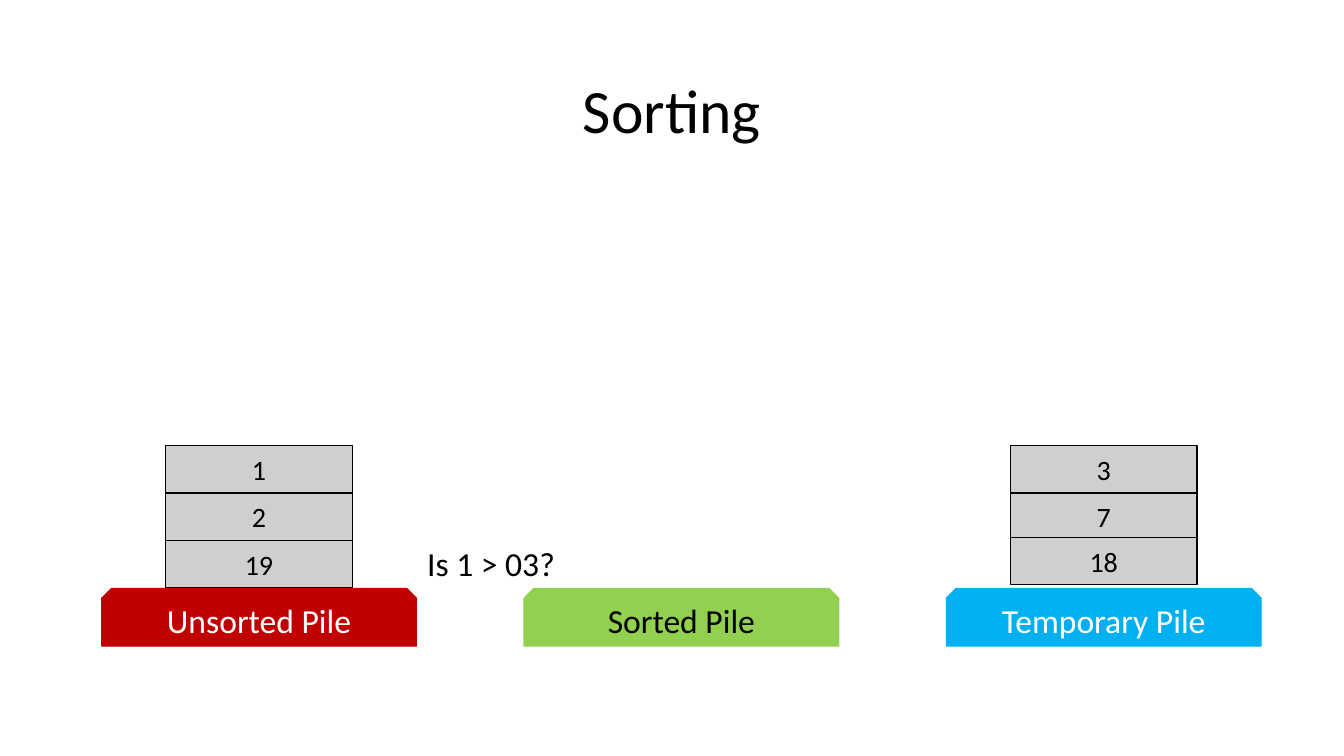
from pptx import Presentation
from pptx.dml.color import RGBColor
from pptx.enum.shapes import MSO_SHAPE
from pptx.enum.text import MSO_ANCHOR, MSO_AUTO_SIZE, PP_ALIGN
from pptx.util import Pt

HEX = {
    "red": "C00000", "green": "92D050", "blue": "00B0F0",
    "gray": "D0CECE", "black": "000000", "white": "FFFFFF",
}
BASE_TOP, BASE_W, BASE_H = 420.5, 224.64, 41
BASE_LEFT, BASE_STEP = 72.7, 301.7
CARD_TOP, CARD_W, CARD_H = 318.2, 133.2, 33.9
PILES = [
    ("Unsorted Pile", "red", "white", ["1", "2", "19"], 386),
    ("Sorted Pile", "green", "black", [], 386),
    ("Temporary Pile", "blue", "white", ["3", "7", "18"], 383.8),
]


def color(name):
    """Return the named colour."""
    return RGBColor.from_string(HEX[name])


def write(shape, text, size, ink="black", align=PP_ALIGN.CENTER):
    """Put one line of styled text in a shape."""
    frame = shape.text_frame
    frame.text = text
    frame.vertical_anchor = MSO_ANCHOR.MIDDLE
    line = frame.paragraphs[0]
    line.alignment = align
    font = line.runs[0].font
    font.name, font.size = "Calibri", Pt(size)
    font.color.rgb = color(ink)
    return frame


def add_block(slide, kind, box, fill, edge, text, size, ink):
    """Draw a filled and labelled shape."""
    shape = slide.shapes.add_shape(kind, *map(Pt, box))
    shape.shadow.inherit = False
    shape.fill.solid()
    shape.fill.fore_color.rgb = color(fill)
    shape.line.color.rgb = color(edge)
    shape.line.width = Pt(1)
    write(shape, text, size, ink)


def add_pile(slide, left, label, fill, ink, cards, last):
    """Draw a pile base with its cards, the lowest no deeper than last."""
    add_block(slide, MSO_SHAPE.SNIP_2_SAME_RECTANGLE,
              (left, BASE_TOP, BASE_W, BASE_H), fill, fill, label, 24, ink)
    inset = (BASE_W - CARD_W) / 2
    for row, card in enumerate(cards):
        top = min(CARD_TOP + row * CARD_H, last)
        add_block(slide, MSO_SHAPE.RECTANGLE,
                  (left + inset, top, CARD_W, CARD_H),
                  "gray", "black", card, 20, "black")


def add_title(slide, text):
    """Add the centred heading."""
    box = slide.shapes.add_textbox(Pt(66), Pt(28.8), Pt(828), Pt(104.4))
    frame = write(box, text, 44)
    frame.word_wrap = True
    frame.paragraphs[0].line_spacing = 0.9


def add_note(slide, text):
    """Add the question beside the first pile."""
    box = slide.shapes.add_textbox(Pt(298), Pt(384.5), Pt(106.6), Pt(36))
    frame = write(box, text, 24, align=PP_ALIGN.LEFT)
    frame.vertical_anchor = MSO_ANCHOR.TOP
    frame.word_wrap = False
    frame.auto_size = MSO_AUTO_SIZE.SHAPE_TO_FIT_TEXT


def main():
    """Build the sorting slide."""
    deck = Presentation()
    deck.slide_width, deck.slide_height = Pt(960), Pt(540)
    slide = deck.slides.add_slide(deck.slide_layouts[6])
    add_title(slide, "Sorting")
    for spot, pile in enumerate(PILES):
        add_pile(slide, BASE_LEFT + spot * BASE_STEP, *pile)
    add_note(slide, "Is 1 > 03?")
    deck.save("out.pptx")


if __name__ == "__main__":
    main()
